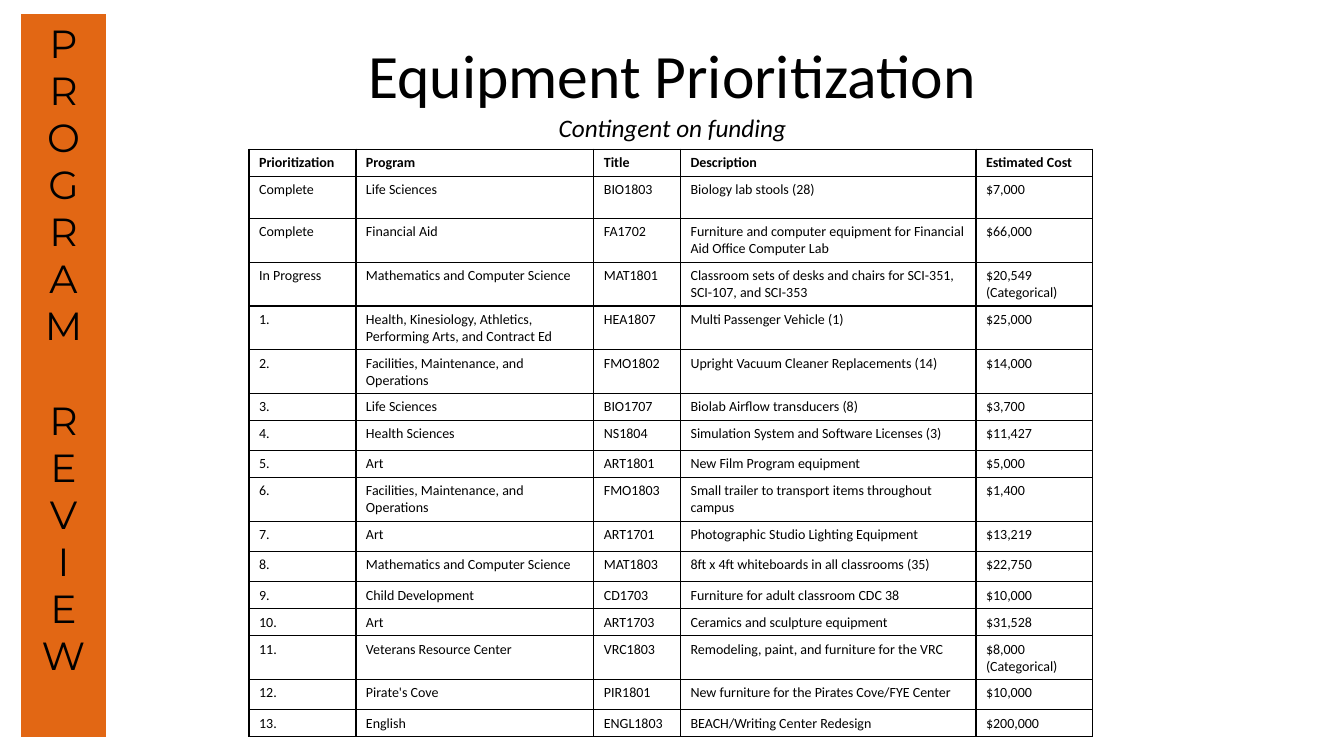
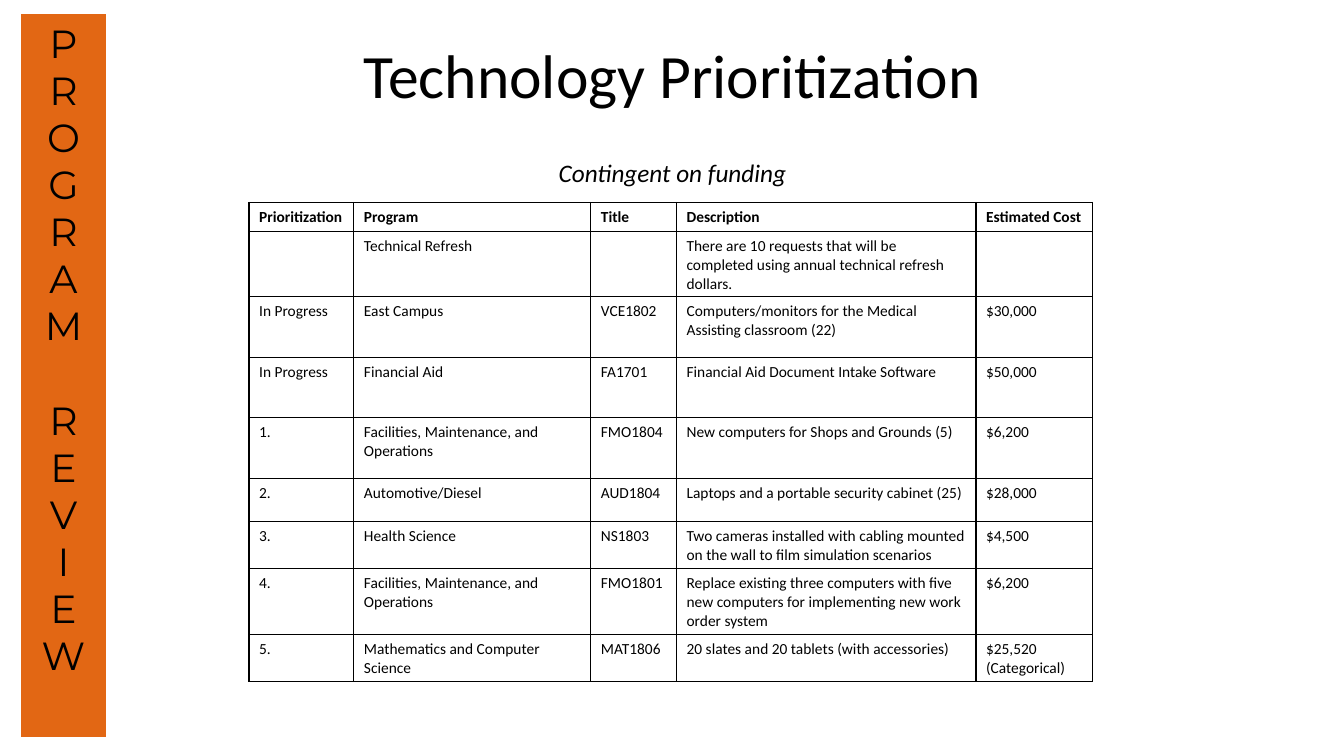
from lxml.etree import SubElement
from pptx import Presentation
from pptx.dml.color import RGBColor
from pptx.enum.shapes import MSO_SHAPE
from pptx.enum.text import MSO_ANCHOR, MSO_AUTO_SIZE, PP_ALIGN
from pptx.oxml.ns import qn
from pptx.util import Inches, Pt

ORANGE = RGBColor(0xE2, 0x67, 0x14)
BLACK = RGBColor(0, 0, 0)
BODY_FONT, BAND_FONT = "Calibri", "Montserrat"
BAND_WORDS = ("PROGRAM", "REVIEW")
HEADERS = ("Prioritization", "Program", "Title", "Description", "Estimated Cost")
HEADER_HEIGHT = 0.26

# Each row: height in inches, then the five cells
EQUIPMENT = [
    (0.42, "Complete", "Life Sciences", "BIO1803", "Biology lab stools (28)", "$7,000"),
    (0.43, "Complete", "Financial Aid", "FA1702",
     "Furniture and computer equipment for Financial Aid Office Computer Lab", "$66,000"),
    (0.43, "In Progress", "Mathematics and Computer Science", "MAT1801",
     "Classroom sets of desks and chairs for SCI-351, SCI-107, and SCI-353", "$20,549 (Categorical)"),
    (0.43, "1.", "Health, Kinesiology, Athletics, Performing Arts, and Contract Ed", "HEA1807",
     "Multi Passenger Vehicle (1)", "$25,000"),
    (0.43, "2.", "Facilities, Maintenance, and Operations", "FMO1802",
     "Upright Vacuum Cleaner Replacements (14)", "$14,000"),
    (0.26, "3.", "Life Sciences", "BIO1707", "Biolab Airflow transducers (8)", "$3,700"),
    (0.3, "4.", "Health Sciences", "NS1804", "Simulation System and Software Licenses (3)", "$11,427"),
    (0.26, "5.", "Art", "ART1801", "New Film Program equipment", "$5,000"),
    (0.43, "6.", "Facilities, Maintenance, and Operations", "FMO1803",
     "Small trailer to transport items throughout campus", "$1,400"),
    (0.3, "7.", "Art", "ART1701", "Photographic Studio Lighting Equipment", "$13,219"),
    (0.3, "8.", "Mathematics and Computer Science", "MAT1803",
     "8ft x 4ft whiteboards in all classrooms (35)", "$22,750"),
    (0.26, "9.", "Child Development", "CD1703", "Furniture for adult classroom CDC 38", "$10,000"),
    (0.26, "10.", "Art", "ART1703", "Ceramics and sculpture equipment", "$31,528"),
    (0.43, "11.", "Veterans Resource Center", "VRC1803",
     "Remodeling, paint, and furniture for the VRC", "$8,000 (Categorical)"),
    (0.3, "12.", "Pirate's Cove", "PIR1801", "New furniture for the Pirates Cove/FYE Center", "$10,000"),
    (0.26, "13.", "English", "ENGL1803", "BEACH/Writing Center Redesign", "$200,000"),
]
TECHNOLOGY = [
    (0.6, "", "Technical Refresh", "",
     "There are 10 requests that will be completed using annual technical refresh dollars.", ""),
    (0.6, "In Progress", "East Campus", "VCE1802",
     "Computers/monitors for the Medical Assisting classroom (22)", "$30,000"),
    (0.6, "In Progress", "Financial Aid", "FA1701", "Financial Aid Document Intake Software", "$50,000"),
    (0.6, "1.", "Facilities, Maintenance, and Operations", "FMO1804",
     "New computers for Shops and Grounds (5)", "$6,200"),
    (0.43, "2.", "Automotive/Diesel", "AUD1804", "Laptops and a portable security cabinet (25)", "$28,000"),
    (0.26, "3.", "Health Science", "NS1803",
     "Two cameras installed with cabling mounted on the wall to film simulation scenarios", "$4,500"),
    (0.43, "4.", "Facilities, Maintenance, and Operations", "FMO1801",
     "Replace existing three computers with five new computers for implementing new work order system",
     "$6,200"),
    (0.26, "5.", "Mathematics and Computer Science", "MAT1806",
     "20 slates and 20 tablets (with accessories)", "$25,520 (Categorical)"),
]

# Title, subtitle top, table top, text size, column widths, rows
SLIDES = [
    ("Equipment Prioritization", 1.07, 1.48, 10, (1.06, 2.36, 0.86, 2.93, 1.16), EQUIPMENT),
    ("Technology Prioritization", 1.51, 2.01, 11, (1.04, 2.35, 0.85, 2.97, 1.16), TECHNOLOGY),
]


def style(paragraph, size, font=BODY_FONT, align=PP_ALIGN.CENTER, bold=False, italic=False):
    paragraph.alignment = align
    paragraph.font.name = font
    paragraph.font.size = Pt(size)
    paragraph.font.color.rgb = BLACK
    paragraph.font.bold = bold
    paragraph.font.italic = italic


def add_borders(cell):
    properties = cell._tc.get_or_add_tcPr()
    for side in ("lnL", "lnR", "lnT", "lnB"):
        line = SubElement(properties, qn(f"a:{side}"), w=str(Pt(1)))
        fill = SubElement(line, qn("a:solidFill"))
        SubElement(fill, qn("a:srgbClr"), val=str(BLACK))


presentation = Presentation()
presentation.slide_width, presentation.slide_height = Inches(13.33), Inches(7.5)

# Shared title place
layout = presentation.slide_layouts.get_by_name("Title Only")
layout_title = layout.placeholders[0]
layout_title.left, layout_title.top = Inches(0.92), Inches(0.4)
layout_title.width, layout_title.height = Inches(11.5), Inches(1.21)

for title_text, subtitle_top, table_top, size, widths, rows in SLIDES:
    slide = presentation.slides.add_slide(layout)

    # Title
    title = slide.shapes.title
    title.text_frame.text = title_text
    title.text_frame.vertical_anchor = MSO_ANCHOR.TOP
    title.text_frame.auto_size = MSO_AUTO_SIZE.NONE
    style(title.text_frame.paragraphs[0], 44)
    title.text_frame.paragraphs[0].line_spacing = 0.9

    # Subtitle
    subtitle = slide.shapes.add_textbox(Inches(1.25), Inches(subtitle_top), Inches(10.84), Inches(0.4))
    subtitle.text_frame.word_wrap = True
    subtitle.text_frame.text = "Contingent on funding"
    style(subtitle.text_frame.paragraphs[0], 18, italic=True)

    # Priority table
    lines = [(HEADER_HEIGHT, *HEADERS), *rows]
    table = slide.shapes.add_table(
        len(lines), len(HEADERS), Inches(2.47), Inches(table_top),
        Inches(sum(widths)), Inches(sum(line[0] for line in lines))).table
    table.first_row = table.horz_banding = False
    for column, width in zip(table.columns, widths):
        column.width = Inches(width)
    for row_index, (height, *texts) in enumerate(lines):
        table.rows[row_index].height = Inches(height)
        for cell, text in zip(table.rows[row_index].cells, texts):
            cell.text = text
            add_borders(cell)
            cell.fill.background()
            style(cell.text_frame.paragraphs[0], size, align=PP_ALIGN.LEFT, bold=row_index == 0)

    # Side band, one letter a line
    band = slide.shapes.add_shape(
        MSO_SHAPE.RECTANGLE, Inches(0.21), Inches(0.14), Inches(0.84), Inches(7.17))
    band.shadow.inherit = False
    band.fill.solid()
    band.fill.fore_color.rgb = ORANGE
    band.line.fill.background()
    band.text_frame.vertical_anchor = MSO_ANCHOR.TOP
    band.text_frame.text = "\n".join("".join(BAND_WORDS))
    for paragraph in band.text_frame.paragraphs:
        style(paragraph, 28, BAND_FONT)
    band.text_frame.paragraphs[len(BAND_WORDS[0])].space_before = Pt(34)

presentation.save("out.pptx")
